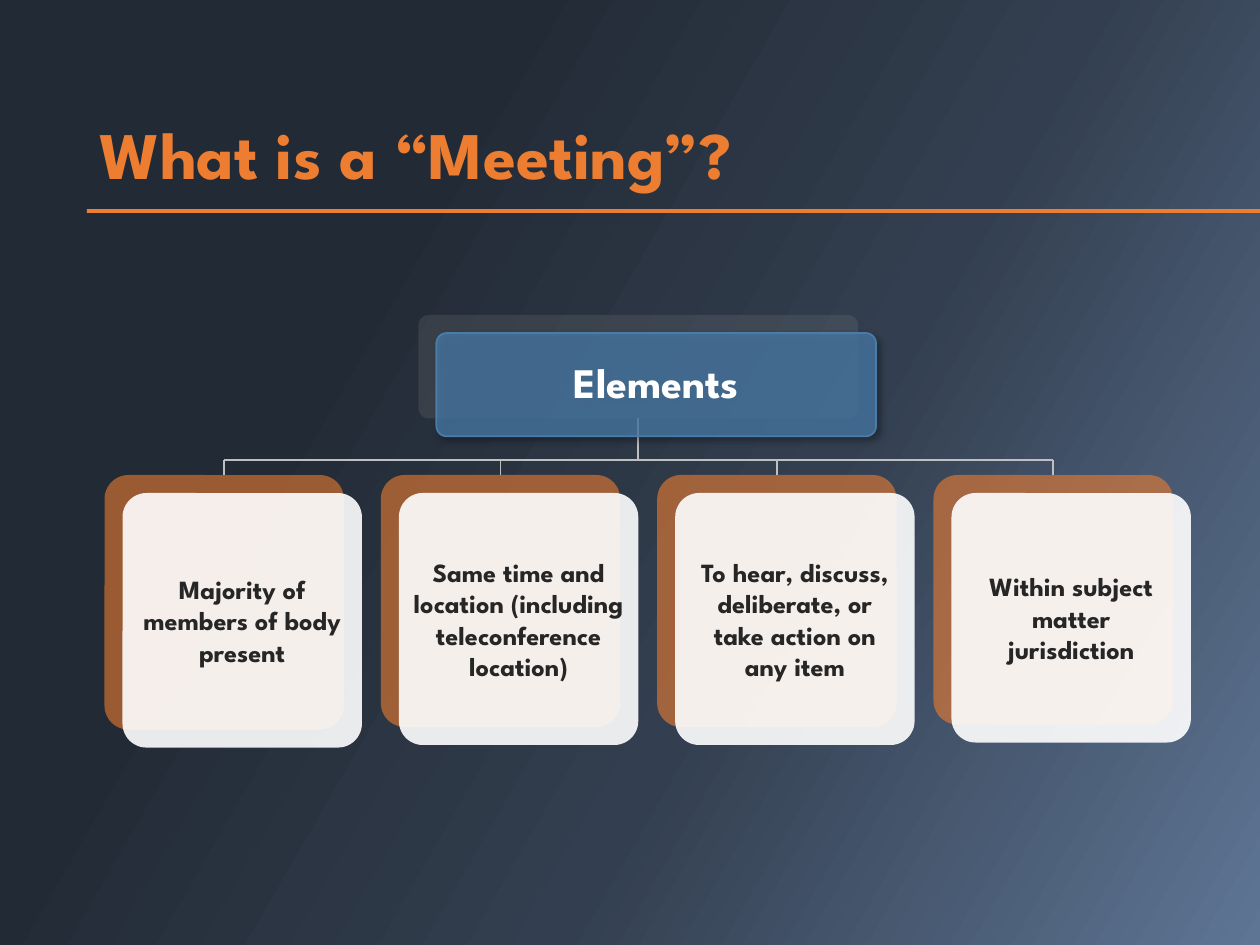
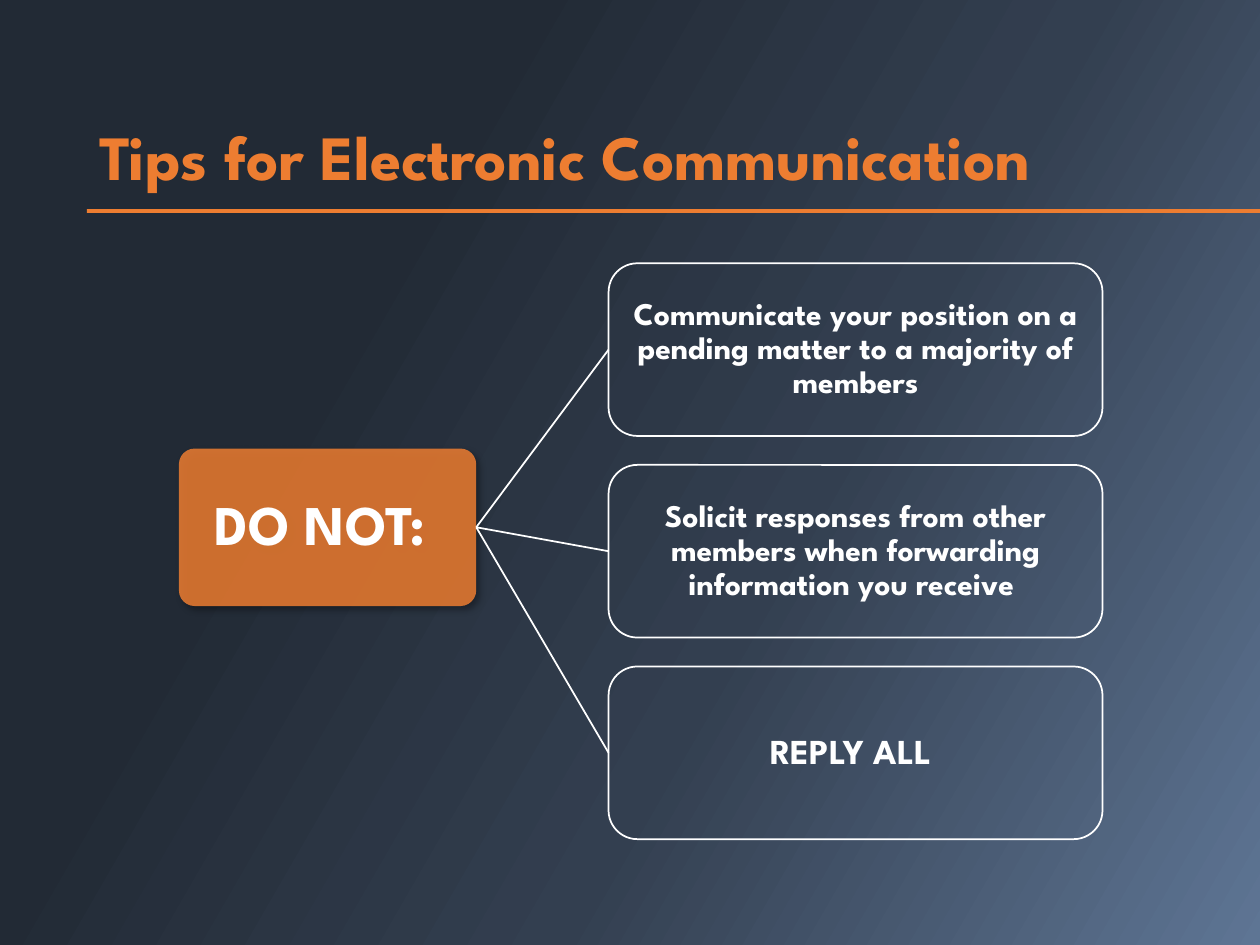
import dataclasses

import lxml.etree
import pptx
import pptx.dml.color
import pptx.enum.shapes
import pptx.enum.text
import pptx.oxml.ns
import pptx.util

qn = pptx.oxml.ns.qn
Shape = pptx.enum.shapes.MSO_SHAPE
Anchor = pptx.enum.text.MSO_ANCHOR
Align = pptx.enum.text.PP_ALIGN
TOP, LEFT, BOTTOM, RIGHT = range(4)  # connection sites of a rectangle


@dataclasses.dataclass(frozen=True)
class Theme:
    font: str = "League Spartan"
    accent: str = "ED7D31"
    blue: str = "4A7CAA"
    gray: str = "808080"
    tree_line: str = "BFBFBF"
    white: str = "FFFFFF"
    ink: str = "262626"
    backdrop: tuple = ((0, "222A35"), (29, "222A35"), (61, "333F50"), (100, "5E7594"))
    backdrop_angle: int = 30
    title_size: int = 38
    long_title_size: int = 36
    warning_size: int = 32
    root_size: int = 24
    short_tip_size: int = 20
    tip_size: int = 18
    card_size: int = 15


def rgb(color):
    return pptx.dml.color.RGBColor.from_string(color)


def child(parent, tag, **attrs):
    return lxml.etree.SubElement(parent, qn(tag), {k: str(v) for k, v in attrs.items()})


class Deck:
    """Draws on the current slide; lengths are cells of a 100 x 75 grid."""

    columns, rows = 100, 75

    def __init__(self, theme):
        self.theme = theme
        self.prs = prs = pptx.Presentation()
        prs.slide_width = pptx.util.Inches(10)
        prs.slide_height = pptx.util.Inches(7.5)
        self.paint_backdrop()

    def x(self, col):
        return round(self.prs.slide_width * col / self.columns)

    def y(self, row):
        return round(self.prs.slide_height * row / self.rows)

    def box(self, col, row, width, height):
        return self.x(col), self.y(row), self.x(width), self.y(height)

    def paint_backdrop(self):
        master = self.prs.slide_master
        fill = master.background.fill
        fill.gradient()
        fill.gradient_angle = 360 - self.theme.backdrop_angle
        stops = master.element.find(".//" + qn("a:gsLst"))
        for stop in list(stops):
            stops.remove(stop)
        for percent, color in self.theme.backdrop:
            child(child(stops, "a:gs", pos=percent * 1000), "a:srgbClr", val=color)

    def new_slide(self, title, size):
        self.slide = self.prs.slides.add_slide(self.prs.slide_layouts[6])
        self.plate(6.9, 16.6, 93.1, 0.3, self.theme.accent, kind=Shape.RECTANGLE)
        sp = self.slide.shapes.add_textbox(*self.box(6.9, 4, 86.2, 11.9))
        self.label(sp, title, size, self.theme.accent, spacing=0.9,
                   anchor=Anchor.BOTTOM, align=Align.LEFT)

    def label(self, sp, text, size, color, inset=None, spacing=None,
              anchor=Anchor.MIDDLE, align=Align.CENTER):
        tf = sp.text_frame
        tf.word_wrap = True
        tf.vertical_anchor = anchor
        if inset is not None:
            tf.margin_left = tf.margin_right = self.x(inset)
            tf.margin_top = tf.margin_bottom = self.y(inset)
        p = tf.paragraphs[0]
        p.text = text
        p.alignment = align
        if spacing:
            p.line_spacing = spacing
        p.font.name = self.theme.font
        p.font.size = pptx.util.Pt(size)
        p.font.bold = True
        p.font.color.rgb = rgb(color)

    def plate(self, col, row, width, height, fill=None, opacity=100, line=None,
              corner=0.1, shadow=False, kind=Shape.ROUNDED_RECTANGLE):
        sp = self.slide.shapes.add_shape(kind, *self.box(col, row, width, height))
        sp.shadow.inherit = False
        if kind == Shape.ROUNDED_RECTANGLE:
            sp.adjustments[0] = corner
        if fill:
            sp.fill.solid()
            sp.fill.fore_color.rgb = rgb(fill)
            if opacity < 100:
                color = sp.element.spPr.find(qn("a:solidFill"))[0]
                child(color, "a:alpha", val=opacity * 1000)
        else:
            sp.fill.background()
        if line:
            sp.line.color.rgb = rgb(line)
            sp.line.width = pptx.util.Pt(1)
        else:
            sp.line.fill.background()
        if shadow:
            self.drop_shadow(sp)
        return sp

    def drop_shadow(self, sp):
        effects = sp.element.spPr.find(qn("a:effectLst"))
        outer = child(effects, "a:outerShdw", blurRad=pptx.util.Pt(4),
                      dist=pptx.util.Pt(3), dir=45 * 60000, algn="tl", rotWithShape=0)
        child(child(outer, "a:srgbClr", val="000000"), "a:alpha", val=40000)

    def line(self, color, start=(0, 0), end=(0, 0), begin_at=None, end_at=None):
        """Straight line; begin_at and end_at are (shape, connection site)."""
        cx = self.slide.shapes.add_connector(
            pptx.enum.shapes.MSO_CONNECTOR.STRAIGHT,
            self.x(start[0]), self.y(start[1]), self.x(end[0]), self.y(end[1]))
        if begin_at:
            cx.begin_connect(*begin_at)
        if end_at:
            cx.end_connect(*end_at)
        cx.line.color.rgb = rgb(color)
        cx.line.width = pptx.util.Pt(1)
        child(cx.element.spPr, "a:effectLst")


def meeting_slide(deck):
    th = deck.theme
    deck.new_slide("What is a “Meeting”?", th.title_size)
    cards = [
        ("Majority of members of body present", 20.2),
        ("Same time and location (including teleconference location)", 20),
        ("To hear, discuss, deliberate, or take action on any item", 20),
        ("Within subject matter jurisdiction", 19.8),
    ]
    left, top, width, pitch = 8.3, 37.7, 19, 21.93
    root_left, root_top, root_width, root_height = 33.2, 25, 34.9, 8.2
    offset, bus_row = 1.43, 36.5
    lefts = [left + i * pitch for i in range(len(cards))]
    centers = [col + width / 2 for col in lefts]
    root_center = root_left + root_width / 2

    # Back plates
    root = deck.plate(root_left, root_top, root_width, root_height, th.gray, 21)
    backs = [deck.plate(col, top, width, height, th.accent, 60)
             for col, (text, height) in zip(lefts, cards)]

    # Tree lines
    deck.line(th.tree_line, end=(root_center, bus_row), begin_at=(root, BOTTOM))
    deck.line(th.tree_line, (centers[0], bus_row), (centers[-1], bus_row))
    for center, back in zip(centers, backs):
        deck.line(th.tree_line, start=(center, bus_row), end_at=(back, TOP))

    # Front plates with text
    sp = deck.plate(root_left + offset, root_top + offset, root_width, root_height,
                    th.blue, 75, line=th.blue, shadow=True)
    deck.label(sp, "Elements", th.root_size, th.white, inset=1, spacing=0.9)
    for col, (text, height) in zip(lefts, cards):
        sp = deck.plate(col + offset, top + offset, width, height, th.white, 90)
        deck.label(sp, text, th.card_size, th.ink, inset=0.6)


def tips_slide(deck):
    th = deck.theme
    deck.new_slide("Tips for Electronic Communication", th.long_title_size)

    # Warning box
    warning = deck.plate(14.2, 35.6, 23.6, 12.5, th.accent, 85, shadow=True)
    deck.label(warning, "DO NOT: ", th.warning_size, th.white, inset=0.2, spacing=0.9)

    # Tips, each joined to the warning
    tips = [
        ("Communicate your position on a pending matter to a majority of members",
         th.tip_size, 1),
        ("Solicit responses from other members when forwarding information you receive ",
         th.tip_size, 0.1),
        ("REPLY ALL ", th.short_tip_size, 1),
    ]
    for i, (text, size, inset) in enumerate(tips):
        tip = deck.plate(48.3, 20.9 + 16 * i, 39.2, 13.7, line=th.white, corner=1 / 6)
        deck.label(tip, text, size, th.white, inset=inset, spacing=0.9)
        deck.line(th.white, begin_at=(warning, RIGHT), end_at=(tip, LEFT))


def main():
    deck = Deck(Theme())
    meeting_slide(deck)
    tips_slide(deck)
    deck.prs.save("out.pptx")


if __name__ == "__main__":
    main()
